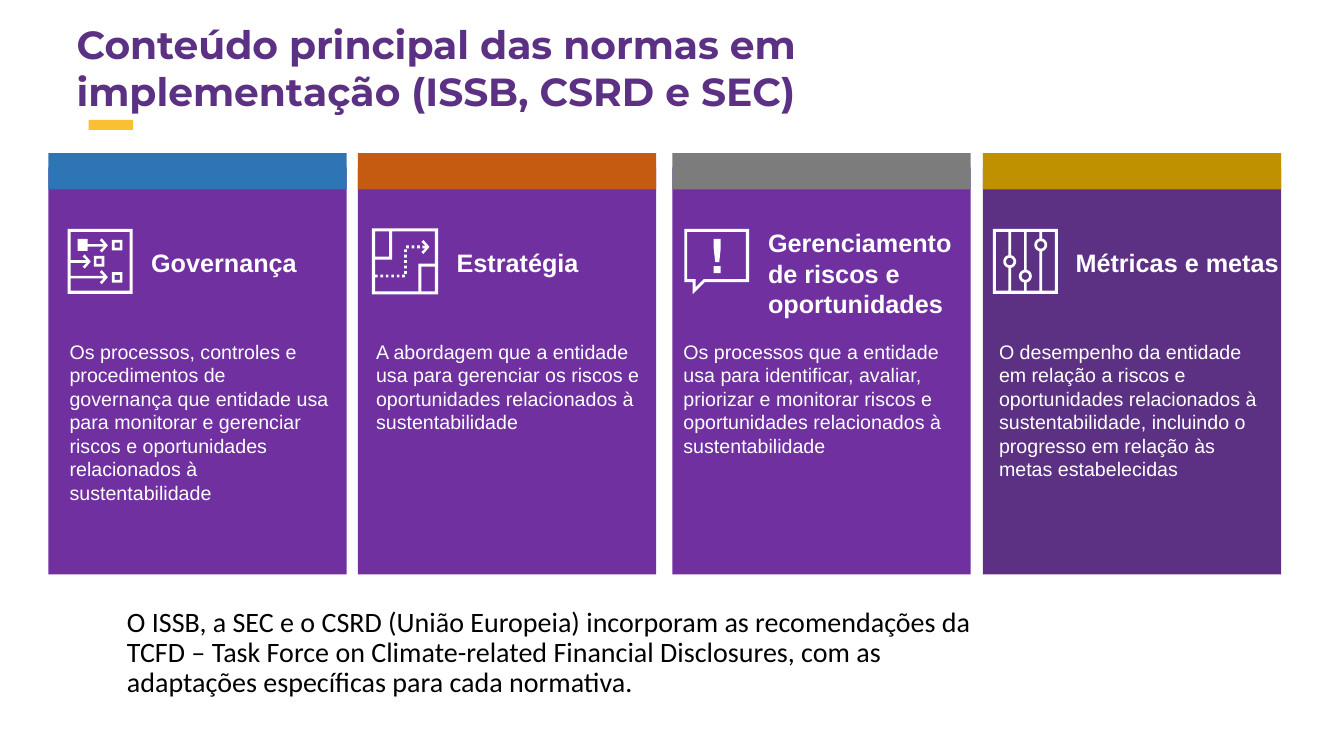
from dataclasses import dataclass
from math import cos, pi, sin

from pptx import Presentation
from pptx.dml.color import RGBColor
from pptx.enum.shapes import MSO_SHAPE
from pptx.enum.text import MSO_ANCHOR, PP_ALIGN
from pptx.slide import Slide
from pptx.text.text import TextFrame
from pptx.util import Inches, Pt

Point = tuple[float, float]
Outline = list[Point]

SLIDE_WIDTH, SLIDE_HEIGHT = Inches(13.33), Inches(7.5)
ICON_UNIT = Inches(0.01)
ICON_PRECISION = 10
COLORS = {
    "violet": "5C3183", "purple": "7030A0", "yellow": "F9C032", "blue": "2E75B6",
    "orange": "C55A11", "gray": "7C7C7C", "gold": "BF9000", "white": "FFFFFF", "black": "000000",
}


@dataclass(frozen=True)
class Area:
    """Percent shares of the slide's width and height."""
    left: float
    top: float
    width: float
    height: float

    def emu(self) -> tuple[int, int, int, int]:
        return (round(SLIDE_WIDTH * self.left / 100), round(SLIDE_HEIGHT * self.top / 100),
                round(SLIDE_WIDTH * self.width / 100), round(SLIDE_HEIGHT * self.height / 100))


@dataclass(frozen=True)
class Style:
    font: str
    size: int
    color: str
    bold: bool = False


@dataclass(frozen=True)
class Pillar:
    heading: str
    summary: str
    band: str
    panel: str
    left: float
    icon_left: float
    heading_left: float
    summary_left: float
    summary_width: float
    icon: list[Outline]
    heading_top: float = 32.67
    heading_lines: int = 1


TITLE = Style("Montserrat", 28, "violet", True)
HEADING = Style("Arial", 18, "white", True)
SUMMARY = Style("Arial", 14, "white")
CLOSING = Style("Calibri", 20, "black")


def box(x: float, y: float, width: float, height: float) -> Outline:
    return [(x, y), (x + width, y), (x + width, y + height), (x, y + height)]


def frame(x: float, y: float, size: float, border: float) -> list[Outline]:
    inner = size - 2 * border
    return [box(x, y, size, size), box(x + border, y + border, inner, inner)]


def arrow(tail: float, tip: float, y: float) -> Outline:
    upper = [(tail, y - 1.3), (tip - 4, y - 1.3), (tip - 8, y - 5), (tip - 6, y - 7)]
    lower = [(x, 2 * y - level) for x, level in reversed(upper)]
    return upper + [(tip, y)] + lower


def circle(x: float, y: float, radius: float) -> Outline:
    return [(x + radius * cos(step * pi / 16), y + radius * sin(step * pi / 16)) for step in range(32)]


def slider(x: float, y: float) -> list[Outline]:
    return [box(x - 1.3, 3, 2.6, y - 9.2), box(x - 1.3, y + 6.2, 2.6, 55.3 - y),
            circle(x, y, 6.4), circle(x, y, 3.7)]


def governance_icon() -> list[Outline]:
    return [*frame(0, 0, 64.5, 3), *frame(26, 27, 10.5, 2.7), *frame(44, 43, 10.5, 2.7),
            *frame(44, 11, 10.5, 2.7), box(10, 10, 10, 12),
            arrow(20, 40, 16.5), arrow(3, 23, 32.5), arrow(3, 40, 48)]


def strategy_icon() -> list[Outline]:
    dots = [(3 + 5.4 * step, 45.5) for step in range(6)]
    dots += [(32, 20.3 + 5.4 * step) for step in range(5)]
    dots += [(34 + 5.4 * step, 16.5) for step in range(3)]
    return [*frame(0, -0.5, 65.5, 3),
            [(17, 2.5), (20, 2.5), (20, 30.5), (3, 30.5), (3, 27.5), (17, 27.5)],
            [(46, 62), (46, 34.5), (62.5, 34.5), (62.5, 37.5), (49, 37.5), (49, 62)],
            *(box(x, y, 2.6, 2.8) for x, y in dots), arrow(50, 57, 18)]


def risk_icon() -> list[Outline]:
    return [[(0, 0), (64, 0), (64, 53), (20, 53), (8, 65), (8, 53), (0, 53)],
            [(2.7, 3), (61, 3), (61, 50), (19, 50), (11, 58), (11, 50), (2.7, 50)],
            [(29, 10), (36, 10), (36, 19), (34.5, 33), (30.5, 33), (29, 19)],
            box(29, 37, 7, 7)]


def metrics_icon() -> list[Outline]:
    return [*frame(0, 0, 64.5, 3), *slider(16.7, 32.5), *slider(32.2, 47), *slider(47.5, 16)]


PILLARS = [
    Pillar("Governança",
           "Os processos, controles e procedimentos de governança que entidade usa para monitorar "
           "e gerenciar riscos e oportunidades relacionados à sustentabilidade",
           "blue", "purple", 3.6, 5.03, 11.25, 5.03, 19.5, governance_icon()),
    Pillar("Estratégia",
           "A abordagem que a entidade usa para gerenciar os riscos e oportunidades relacionados "
           "à sustentabilidade",
           "orange", "purple", 26.63, 27.68, 33.98, 27.83, 20.18, strategy_icon()),
    Pillar("Gerenciamento de riscos e oportunidades",
           "Os processos que a entidade usa para identificar, avaliar, priorizar e monitorar riscos "
           "e oportunidades relacionados à sustentabilidade",
           "gray", "purple", 50.03, 50.93, 57.15, 50.7, 20.93, risk_icon(), 30.13, 3),
    Pillar("Métricas e metas",
           "O desempenho da entidade em relação a riscos e oportunidades relacionados à "
           "sustentabilidade, incluindo o progresso em relação às metas estabelecidas",
           "gold", "violet", 73.13, 73.88, 80.03, 74.18, 19.88, metrics_icon()),
]


def rgb(color: str) -> RGBColor:
    return RGBColor.from_string(COLORS[color])


def write(text_frame: TextFrame, text: str, style: Style, inset: float = 0) -> None:
    text_frame.word_wrap = True
    text_frame.margin_left = Inches(inset)
    text_frame.margin_top = text_frame.margin_right = text_frame.margin_bottom = 0
    text_frame.vertical_anchor = MSO_ANCHOR.TOP
    paragraph = text_frame.paragraphs[0]
    paragraph.alignment = PP_ALIGN.LEFT
    run = paragraph.add_run()
    run.text = text
    run.font.name, run.font.size, run.font.bold = style.font, Pt(style.size), style.bold
    run.font.color.rgb = rgb(style.color)


def add_text(slide: Slide, area: Area, text: str, style: Style, inset: float = 0) -> TextFrame:
    text_frame = slide.shapes.add_textbox(*area.emu()).text_frame
    write(text_frame, text, style, inset)
    return text_frame


def add_block(slide: Slide, area: Area, color: str) -> None:
    block = slide.shapes.add_shape(MSO_SHAPE.RECTANGLE, *area.emu())
    block.shadow.inherit = False
    block.fill.solid()
    block.fill.fore_color.rgb = rgb(color)
    block.line.fill.background()


def add_icon(slide: Slide, left: float, top: float, outlines: list[Outline]) -> None:
    scaled = [[(x * ICON_PRECISION, y * ICON_PRECISION) for x, y in outline] for outline in outlines]
    builder = slide.shapes.build_freeform(*scaled[0][0], scale=ICON_UNIT / ICON_PRECISION)
    for position, outline in enumerate(scaled):
        if position:
            builder.move_to(*outline[0])
        builder.add_line_segments(outline[1:], close=True)
    origin_x, origin_y, _, _ = Area(left, top, 0, 0).emu()
    icon = builder.convert_to_shape(origin_x, origin_y)
    icon.shadow.inherit = False
    icon.fill.solid()
    icon.fill.fore_color.rgb = rgb("white")
    icon.line.fill.background()


def add_pillar(slide: Slide, pillar: Pillar) -> None:
    add_block(slide, Area(pillar.left, 22.13, 22.2, 53.87), pillar.panel)
    add_block(slide, Area(pillar.left, 20.27, 22.2, 4.8), pillar.band)
    add_icon(slide, pillar.icon_left, 30.27, pillar.icon)
    heading_area = Area(pillar.heading_left, pillar.heading_top, 15.83, 4.04 * pillar.heading_lines)
    add_text(slide, heading_area, pillar.heading, HEADING)
    summary_area = Area(pillar.summary_left, 44.93, pillar.summary_width, 29.33)
    summary = add_text(slide, summary_area, pillar.summary, SUMMARY, 0.02)
    summary.paragraphs[0].space_after = Pt(6)


def main() -> None:
    presentation = Presentation()
    presentation.slide_width, presentation.slide_height = SLIDE_WIDTH, SLIDE_HEIGHT
    slide = presentation.slides.add_slide(presentation.slide_layouts[5])
    title = slide.shapes.title
    title.left, title.top, title.width, title.height = Area(4.95, 2.4, 71.33, 13.07).emu()
    write(title.text_frame, "Conteúdo principal das normas em implementação (ISSB, CSRD e SEC)", TITLE, 0.1)
    title.text_frame.margin_right = Inches(0.1)
    title.text_frame.vertical_anchor = MSO_ANCHOR.MIDDLE
    add_block(slide, Area(6.6, 15.87, 3.3, 1.33), "yellow")
    for pillar in PILLARS:
        add_pillar(slide, pillar)
    closing = add_text(
        slide, Area(8.25, 80.4, 66, 12.13),
        "O ISSB, a SEC e o CSRD (União Europeia) incorporam as recomendações da TCFD – Task Force on "
        "Climate-related Financial Disclosures, com as adaptações específicas para cada normativa.",
        CLOSING, 0.16)
    closing.paragraphs[0].line_spacing = 0.9
    presentation.save("out.pptx")


if __name__ == "__main__":
    main()
